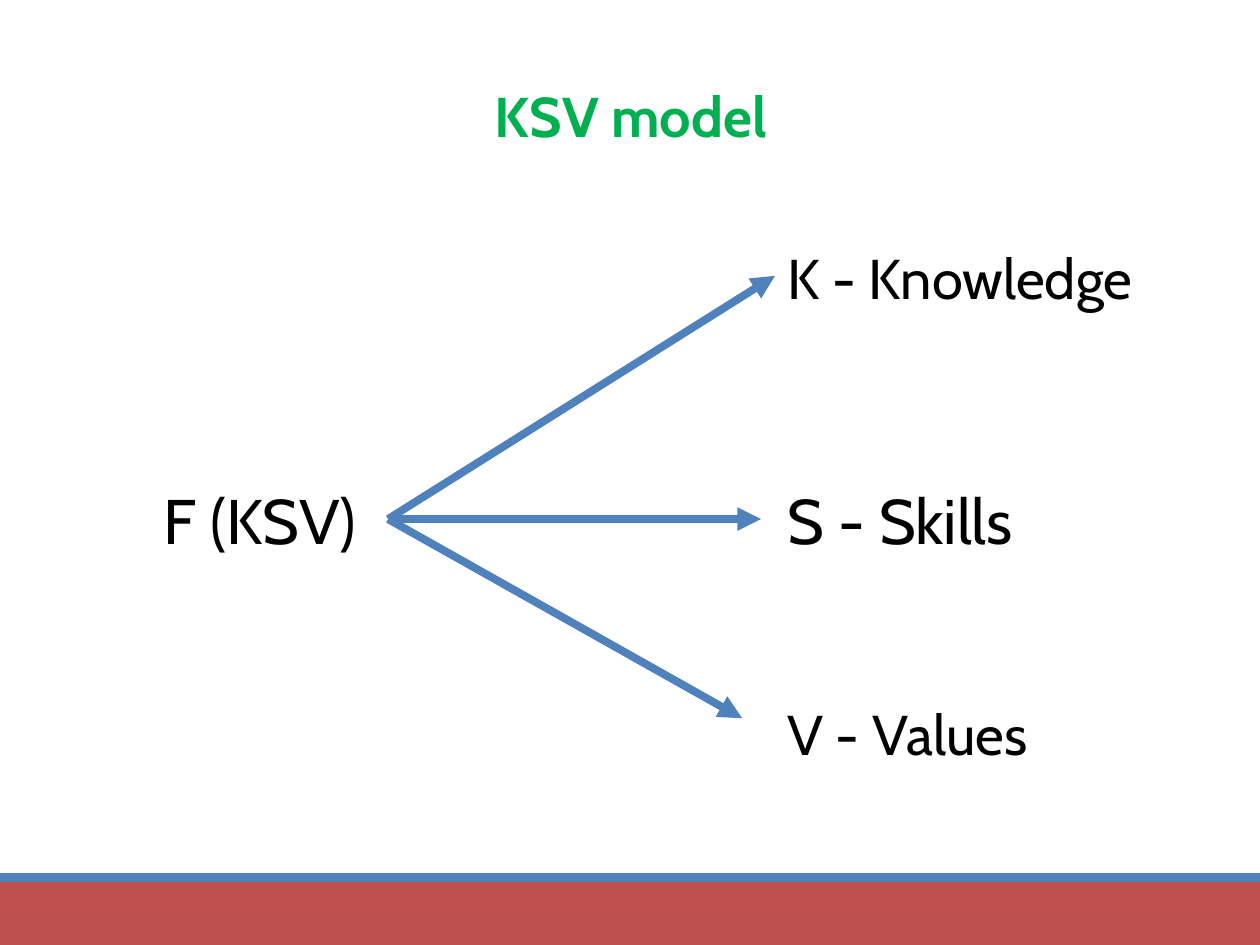
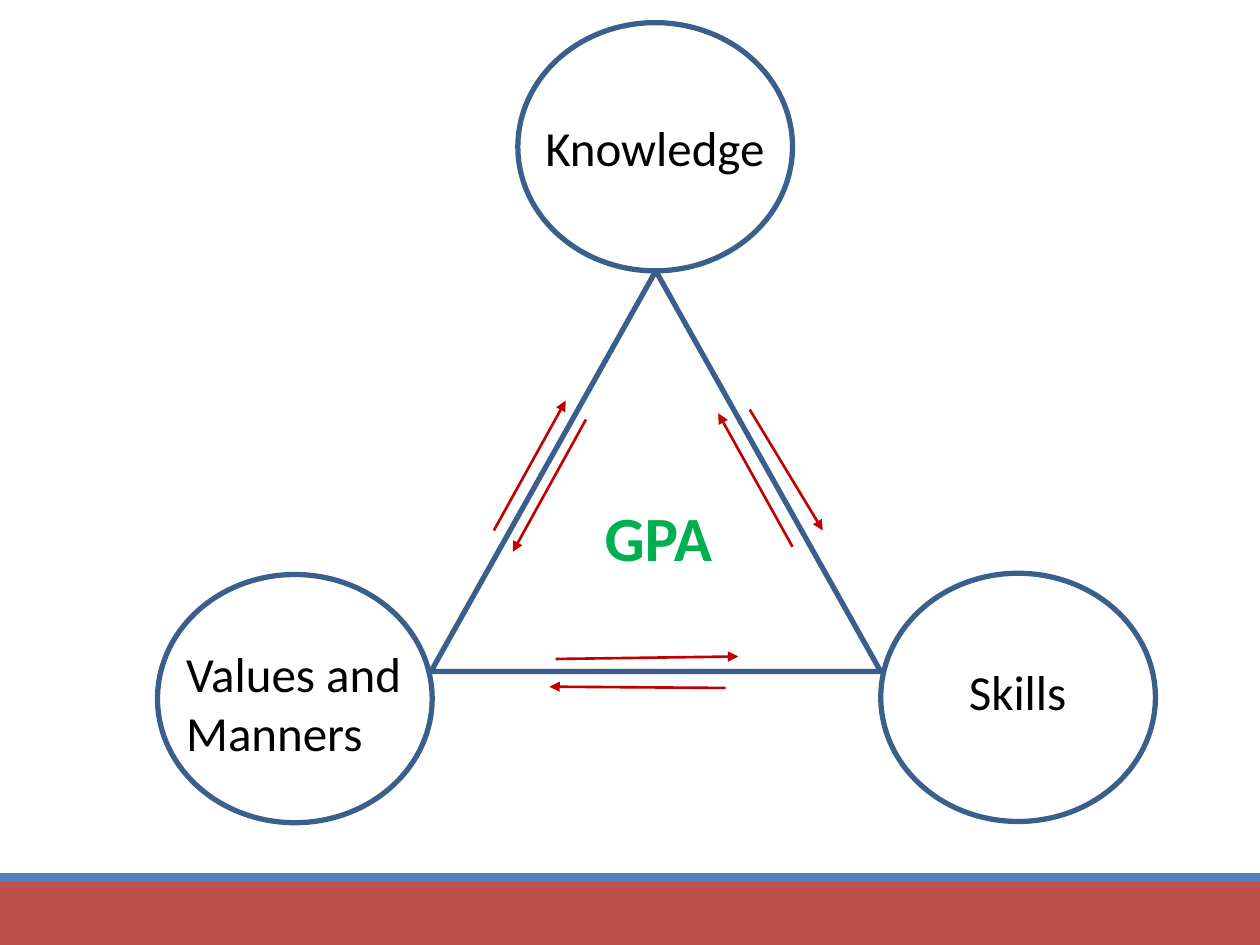
import pptx
import pptx.dml.color
import pptx.enum.shapes
import pptx.enum.text
import pptx.oxml
import pptx.oxml.ns
import pptx.util
from collections import namedtuple

Inches = pptx.util.Inches
RGBColor = pptx.dml.color.RGBColor
SHAPES = pptx.enum.shapes.MSO_SHAPE
Area = namedtuple("Area", "left top width height")

BLACK = RGBColor(0x00, 0x00, 0x00)
GREEN = RGBColor(0x00, 0xB0, 0x50)
BLUE = RGBColor(0x4F, 0x81, 0xBD)
NAVY = RGBColor(0x3A, 0x5F, 0x8C)
BAND_RED = RGBColor(0xC0, 0x50, 0x4D)
ARROW_RED = RGBColor(0xC0, 0x00, 0x00)

MODEL_FONT = "Cabin"
CYCLE_FONT = "Calibri"
PAGE_WIDTH, PAGE_HEIGHT = 10, 7.5
CONTENT = Area(0, 0, PAGE_WIDTH, 6.93)
FOOTER = Area(0, 6.93, PAGE_WIDTH, 0.57)


def add_figure(page, kind, area, fill=None, outline=None):
    """Add a preset shape with either a flat fill or a 3 pt outline."""
    figure = page.shapes.add_shape(kind, *map(Inches, area))
    figure.shadow.inherit = False
    if fill is None:
        figure.fill.background()
    else:
        figure.fill.solid()
        figure.fill.fore_color.rgb = fill
    if outline is None:
        figure.line.fill.background()
    else:
        figure.line.color.rgb = outline
        figure.line.width = pptx.util.Pt(3)


def add_label(page, area, text, name, size, color=BLACK, bold=False):
    """Add an unwrapped text box; each line of text is a paragraph."""
    box = page.shapes.add_textbox(*map(Inches, area))
    frame = box.text_frame
    frame.word_wrap = False
    frame.auto_size = pptx.enum.text.MSO_AUTO_SIZE.SHAPE_TO_FIT_TEXT
    frame.text = text
    formats = {"name": name, "size": pptx.util.Pt(size), "bold": bold}
    for para in frame.paragraphs:
        for span in para.runs:
            for key, value in formats.items():
                setattr(span.font, key, value)
            span.font.color.rgb = color


def add_arrow(page, start, end, color, width):
    """Add a straight line with a triangle head at its end."""
    arrow = page.shapes.add_connector(
        pptx.enum.shapes.MSO_CONNECTOR.STRAIGHT, *map(Inches, (*start, *end)))
    arrow.line.color.rgb = color
    arrow.line.width = pptx.util.Pt(width)
    head = pptx.oxml.parse_xml(
        f'<a:tailEnd {pptx.oxml.ns.nsdecls("a")} type="triangle"/>')
    arrow.line._get_or_add_ln().append(head)
    effects = pptx.oxml.parse_xml(f'<a:effectLst {pptx.oxml.ns.nsdecls("a")}/>')
    arrow._element.spPr.append(effects)


def add_footer(page, area):
    """Draw the red band with a thin blue stripe above it."""
    stripe = 0.07
    add_figure(page, SHAPES.RECTANGLE,
               Area(area.left, area.top + stripe, area.width,
                    area.height - stripe), fill=BAND_RED)
    add_figure(page, SHAPES.RECTANGLE, area._replace(height=stripe), fill=BLUE)


def add_model(page, area):
    """Fan out from the function to its three parts."""
    def place(left, top, width, height):
        return Area(area.left + left, area.top + top, width, height)

    add_label(page, place(3.83, 0.6, 2.62, 0.64), "KSV model", MODEL_FONT, 32,
              GREEN, True)
    add_label(page, place(1.2, 3.77, 1.89, 0.71), "F (KSV)", MODEL_FONT, 36)

    # Text, size, top, width and height of each part, then its arrow tip
    parts = [
        ("K - Knowledge", 32, 1.88, 3.08, 0.64, (6.15, 2.19)),
        ("S - Skills", 36, 3.77, 2.09, 0.71, (6.04, 4.12)),
        ("V - Values", 32, 5.5, 2.19, 0.64, (5.89, 5.7)),
    ]
    start = (area.left + 3.08, area.top + 4.12)
    for text, size, top, width, height, (tip_x, tip_y) in parts:
        add_arrow(page, start, (area.left + tip_x, area.top + tip_y), BLUE, 4.5)
        add_label(page, place(6.15, top, width, height), text, MODEL_FONT, size)


def add_cycle(page, area):
    """Join three circles by a triangle with arrows both ways on each side."""
    def place(left, top, width, height):
        return Area(area.left + left, area.top + top, width, height)

    add_figure(page, SHAPES.ISOSCELES_TRIANGLE, place(3.42, 2.15, 3.57, 3.18),
               outline=NAVY)

    # Corner of each circle, then its text and the box of the text
    circles = [
        ((4.11, 0.18), "Knowledge", (4.23, 0.88, 1.96, 0.57)),
        ((1.25, 4.56), "Values and\nManners", (1.38, 5.06, 1.93, 1.04)),
        ((6.99, 4.55), "Skills", (7.59, 5.2, 0.98, 0.57)),
    ]
    for corner, text, text_area in circles:
        add_figure(page, SHAPES.OVAL, place(*corner, 2.18, 1.97), outline=NAVY)
        add_label(page, place(*text_area), text, CYCLE_FONT, 28)
    add_label(page, place(4.7, 3.91, 1.07, 0.71), "GPA", CYCLE_FONT, 36,
              GREEN, True)

    # Start and end of the two arrows on each side of the triangle
    arrows = [
        (4.41, 5.23, 5.86, 5.21), (5.76, 5.46, 4.36, 5.45),  # base
        (6.29, 4.34, 5.7, 3.28), (5.95, 3.25, 6.53, 4.21),  # right side
        (4.65, 3.33, 4.07, 4.38), (3.92, 4.21, 4.49, 3.18),  # left side
    ]
    for x1, y1, x2, y2 in arrows:
        add_arrow(page, (area.left + x1, area.top + y1),
                  (area.left + x2, area.top + y2), ARROW_RED, 1.5)


def main():
    deck = pptx.Presentation()
    deck.slide_width = Inches(PAGE_WIDTH)
    deck.slide_height = Inches(PAGE_HEIGHT)
    for add_content in (add_model, add_cycle):
        page = deck.slides.add_slide(deck.slide_layouts[6])
        add_footer(page, FOOTER)
        add_content(page, CONTENT)
    deck.save("out.pptx")


if __name__ == "__main__":
    main()
